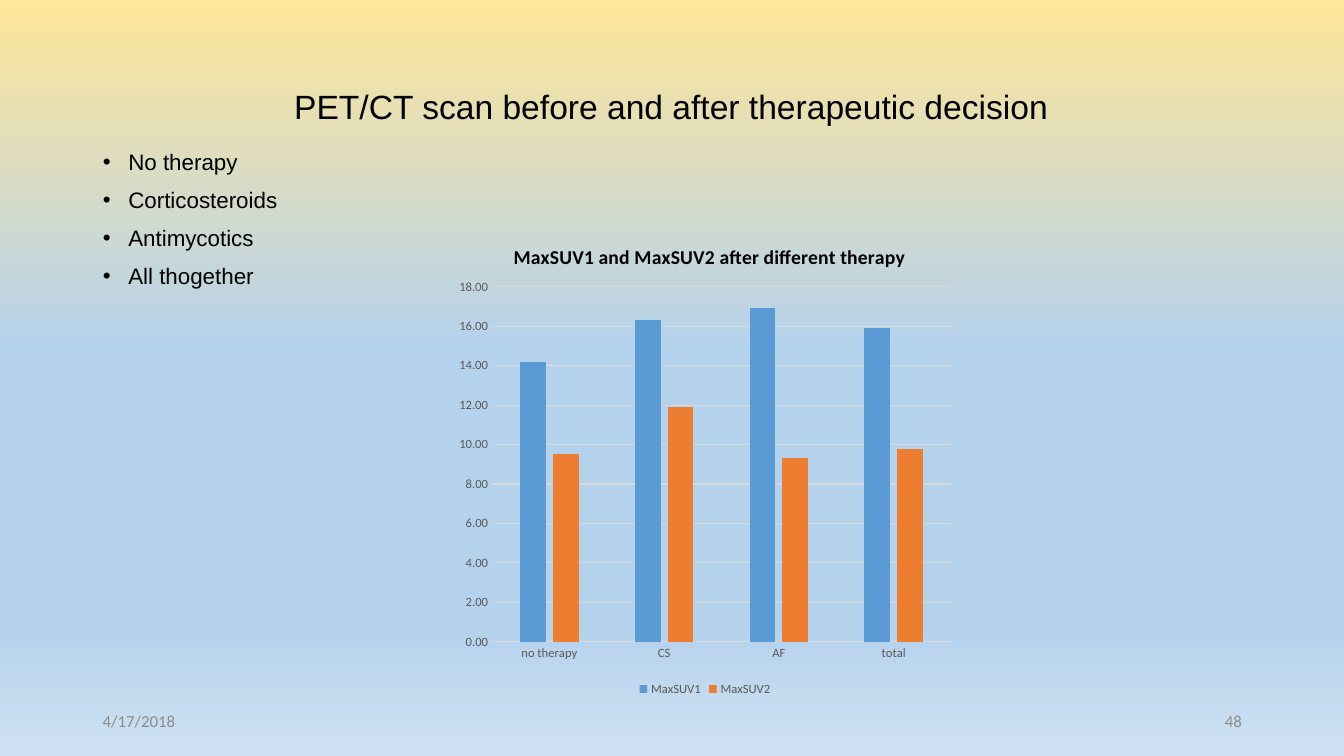
from lxml import etree
from pptx import Presentation
from pptx.chart.data import CategoryChartData
from pptx.dml.color import RGBColor
from pptx.enum.chart import XL_CHART_TYPE as CT, XL_LEGEND_POSITION as LP, XL_TICK_MARK as TM
from pptx.enum.text import MSO_ANCHOR as ANC, MSO_AUTO_SIZE as FIT, PP_ALIGN as AL
from pptx.oxml.ns import qn
from pptx.util import Cm, Pt

COL = {"black": "000000", "gray": "8C8C8C", "label": "595959", "grid": "D9D9D9",
       "suv1": "5B9BD5", "suv2": "ED7D31",
       "sand": "FFE699", "sky": "B5D2EC", "mist": "CEE1F2"}


def rgb(name):
    return RGBColor.from_string(COL[name])


def set_attrs(obj, fmt):
    for name, value in fmt.items():
        setattr(obj, name, value)


def style_font(font, size, color, name="Calibri", bold=False):
    set_attrs(font, {"size": Pt(size), "name": name, "bold": bold})
    font.color.rgb = rgb(color)


def place(sp, box):
    set_attrs(sp, dict(zip(("left", "top", "width", "height"), map(Cm, box))))


def paint_background(s):
    fill = s.background.fill
    fill.gradient()
    fill.gradient_angle = 270
    stops = s.background._cSld.find(".//" + qn("a:gsLst"))
    for old in list(stops):
        stops.remove(old)
    for pos, name in ((0, "sand"), (46, "sky"), (83, "sky"), (100, "mist")):
        gs = etree.SubElement(stops, qn("a:gs"), pos=str(pos * 1000))
        etree.SubElement(gs, qn("a:srgbClr"), val=COL[name])


def fill_title(sp, box, text):
    place(sp, box)
    tf = sp.text_frame
    set_attrs(tf, {"text": text, "vertical_anchor": ANC.MIDDLE,
                   "word_wrap": True, "auto_size": FIT.NONE})
    p = tf.paragraphs[0]
    set_attrs(p, {"alignment": AL.LEFT, "line_spacing": 0.9})
    style_font(p.runs[0].font, 24, "black", "Arial")


def fill_list(sp, box, items):
    place(sp, box)
    tf = sp.text_frame
    set_attrs(tf, {"text": "\n".join(items), "auto_size": FIT.NONE})
    for p in tf.paragraphs:
        set_attrs(p, {"line_spacing": 0.9, "space_before": Pt(10)})
        pPr = p._p.get_or_add_pPr()
        pPr.set("marL", str(Cm(0.64)))
        pPr.set("indent", str(-Cm(0.64)))
        etree.SubElement(pPr, qn("a:buChar"), char="•")
        style_font(p.runs[0].font, 16, "black", "Arial")


def add_footer(s, box, entries):
    """Place the entries at the two ends of the footer strip."""
    left, top, width, height = box
    w = 7.62
    for text, x, align in zip(entries, (left, left + width - w), (AL.LEFT, AL.RIGHT)):
        tf = s.shapes.add_textbox(*map(Cm, (x, top, w, height))).text_frame
        set_attrs(tf, {"text": text, "word_wrap": True, "vertical_anchor": ANC.MIDDLE})
        p = tf.paragraphs[0]
        p.alignment = align
        style_font(p.runs[0].font, 12, "gray")


def set_layout(parent, index, target=None, **fractions):
    """Fix the place of a chart part as fractions of the chart."""
    for old in parent.findall(qn("c:layout")):
        parent.remove(old)
    layout = etree.Element(qn("c:layout"))
    parent.insert(index, layout)
    manual = etree.SubElement(layout, qn("c:manualLayout"))
    if target:
        etree.SubElement(manual, qn("c:layoutTarget"), val=target)
    for key in ("x", "y"):
        etree.SubElement(manual, qn(f"c:{key}Mode"), val="edge")
    for key, value in fractions.items():
        etree.SubElement(manual, qn(f"c:{key}"), val=str(value))


def add_suv_chart(s, box):
    data = CategoryChartData(number_format="0.00")
    data.categories = ["no therapy", "CS", "AF", "total"]
    data.add_series("MaxSUV1", (14.2, 16.3, 16.9, 15.9))
    data.add_series("MaxSUV2", (9.5, 11.9, 9.3, 9.8))
    chart = s.shapes.add_chart(CT.COLUMN_CLUSTERED, *map(Cm, box), data).chart
    style_font(chart.font, 10, "black")

    # Title
    chart.has_title = True
    tf = chart.chart_title.text_frame
    tf.text = "MaxSUV1 and MaxSUV2 after different therapy"
    style_font(tf.paragraphs[0].runs[0].font, 14, "black", bold=True)
    set_layout(chart.chart_title._element, 1, x=0.12, y=0.04)

    # Columns
    plot = chart.plots[0]
    set_attrs(plot, {"gap_width": 219, "overlap": -27, "vary_by_categories": False})
    for series, color in zip(plot.series, ("suv1", "suv2")):
        series.format.fill.solid()
        series.format.fill.fore_color.rgb = rgb(color)
    set_layout(chart._chartSpace.chart.plotArea, 0, "inner", x=0.085, y=0.138, w=0.895, h=0.74)

    # Axes
    cat, val = chart.category_axis, chart.value_axis
    for axis in (cat, val):
        set_attrs(axis, {"major_tick_mark": TM.NONE, "minor_tick_mark": TM.NONE})
        style_font(axis.tick_labels.font, 9, "label")
    set_attrs(val, {"minimum_scale": 0, "maximum_scale": 18, "major_unit": 2,
                    "has_major_gridlines": True})
    set_attrs(val.tick_labels, {"number_format": "0.00", "number_format_is_linked": False})
    val.format.line.fill.background()
    for line in (cat.format.line, val.major_gridlines.format.line):
        line.width = Pt(0.75)
        line.color.rgb = rgb("grid")

    # Legend
    chart.has_legend = True
    set_attrs(chart.legend, {"position": LP.BOTTOM, "include_in_layout": False})
    style_font(chart.legend.font, 9, "label")


def main():
    prs = Presentation()
    set_attrs(prs, {"slide_width": Cm(33.87), "slide_height": Cm(19.05)})
    s = prs.slides.add_slide(prs.slide_layouts[1])
    paint_background(s)
    fill_title(s.shapes.title, (7.16, 0.89, 21.77, 3.68),
               "PET/CT scan before and after therapeutic decision")
    fill_list(s.placeholders[1], (2.34, 3.68, 29.21, 12.09),
              ["No therapy", "Corticosteroids", "Antimycotics", "All thogether"])
    add_footer(s, (2.34, 17.65, 29.21, 1.02), ("4/17/2018", "48"))
    add_suv_chart(s, (11.3, 5.56, 12.93, 12.09))
    prs.save("out.pptx")


if __name__ == "__main__":
    main()
